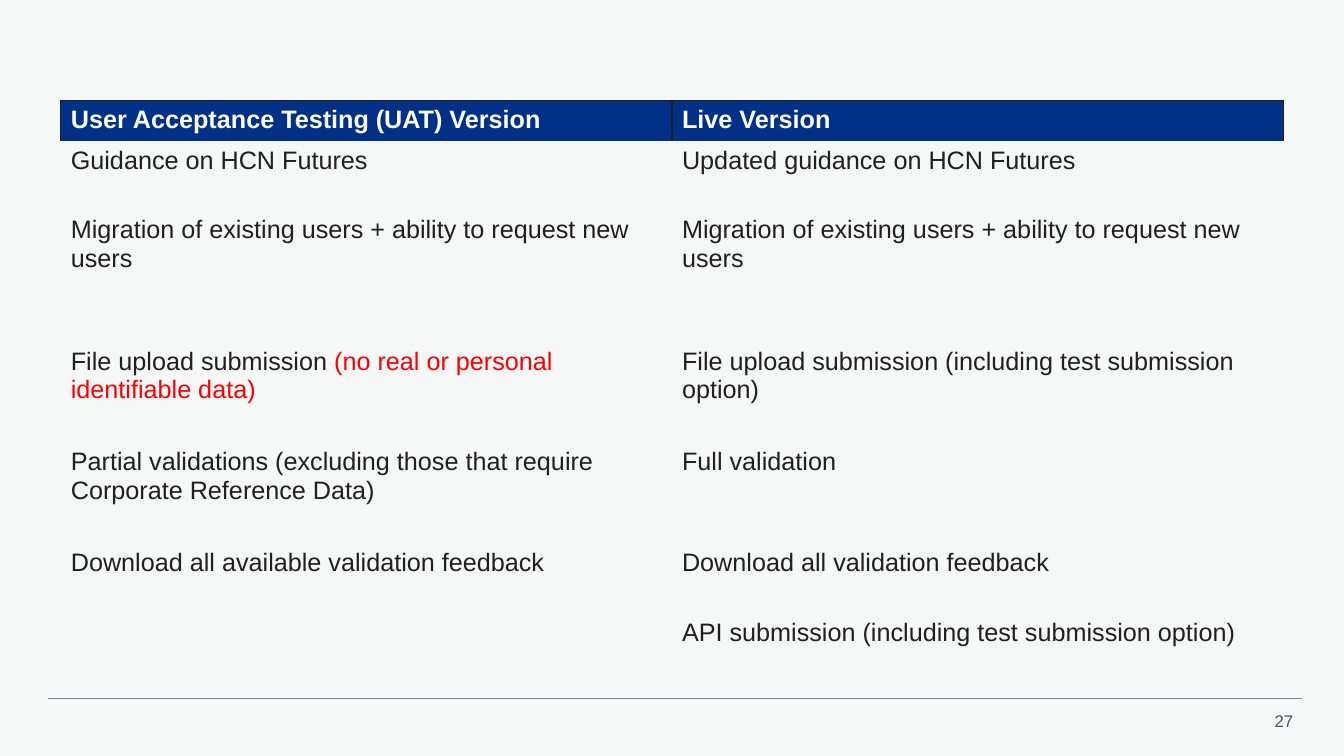
from dataclasses import dataclass

from lxml import etree
from pptx import Presentation
from pptx.dml.color import RGBColor
from pptx.enum.shapes import MSO_CONNECTOR
from pptx.enum.text import PP_ALIGN
from pptx.oxml.ns import qn
from pptx.util import Pt

STRAIGHT = MSO_CONNECTOR.STRAIGHT
RIGHT = PP_ALIGN.RIGHT
BLANK_LAYOUT = 6
PLAIN_TABLE_STYLE = "{2D5ABB26-0587-4C30-8999-92F81FD0307C}"


@dataclass(frozen=True)
class Theme:
    font: str = "Arial"
    background: str = "F6F8F8"
    header: str = "003087"
    header_text: str = "FFFFFF"
    ink: str = "231F20"
    warning: str = "FF0000"
    rule: str = "768692"
    number: str = "425563"
    table_size: float = 18
    number_size: float = 12


THEME = Theme()

HEADINGS = ("User Acceptance Testing (UAT) Version", "Live Version")
MIGRATION = "Migration of existing users + ability to request new users"
COMPARISON = [
    (50, "Guidance on HCN Futures", "Updated guidance on HCN Futures"),
    (93.6, MIGRATION, MIGRATION),
    (72.1, "File upload submission ",
     "File upload submission (including test submission option)"),
    (72.1, "Partial validations (excluding those that require Corporate Reference Data)",
     "Full validation"),
    (50, "Download all available validation feedback", "Download all validation feedback"),
    (50, "", "API submission (including test submission option)"),
]
UPLOAD_ROW = 3
UPLOAD_WARNING = "(no real or personal identifiable data)"
HEADER_HEIGHT = 29.2
COLUMN_WIDTH = 436.6


def add_span(para, text, color, size, bold=False):
    span = para.add_run()
    span.text = text
    formats = {"name": THEME.font, "size": Pt(size), "bold": bold}
    for name, value in formats.items():
        setattr(span.font, name, value)
    span.font.color.rgb = RGBColor.from_string(color)


def add_header_borders(cell):
    properties = cell._tc.get_or_add_tcPr()
    for position, side in enumerate(("lnL", "lnR", "lnT")):
        border = etree.Element(qn(f"a:{side}"), w=str(Pt(1)))
        fill = etree.SubElement(border, qn("a:solidFill"))
        etree.SubElement(fill, qn("a:srgbClr"), val=THEME.ink)
        properties.insert(position, border)


def fill_cell(cell, text, is_header):
    if is_header:
        cell.fill.solid()
        cell.fill.fore_color.rgb = RGBColor.from_string(THEME.header)
        add_header_borders(cell)
    else:
        cell.fill.background()
    if text:
        color = THEME.header_text if is_header else THEME.ink
        add_span(cell.text_frame.paragraphs[0], text, color, THEME.table_size, is_header)


def add_comparison_table(page):
    rows = [(HEADER_HEIGHT, *HEADINGS), *COMPARISON]
    total_height = sum(row[0] for row in rows)
    frame = page.shapes.add_table(
        len(rows), len(HEADINGS), Pt(43.4), Pt(71.6),
        Pt(COLUMN_WIDTH * len(HEADINGS)), Pt(total_height))
    table = frame.table
    table.horz_banding = False
    table._tbl.tblPr.find(qn("a:tableStyleId")).text = PLAIN_TABLE_STYLE
    for column in table.columns:
        column.width = Pt(COLUMN_WIDTH)
    for row_index, (height, *texts) in enumerate(rows):
        table.rows[row_index].height = Pt(height)
        for column_index, text in enumerate(texts):
            fill_cell(table.cell(row_index, column_index), text, row_index == 0)
    upload_para = table.cell(UPLOAD_ROW, 0).text_frame.paragraphs[0]
    add_span(upload_para, UPLOAD_WARNING, THEME.warning, THEME.table_size)


def add_footer_rule(page):
    rule = page.shapes.add_connector(STRAIGHT, Pt(34), Pt(499), Pt(929.8), Pt(499))
    rule.line.color.rgb = RGBColor.from_string(THEME.rule)
    rule.line.width = Pt(0.5)
    etree.SubElement(rule._element.spPr, qn("a:effectLst"))


def add_page_number(page, number):
    box = page.shapes.add_textbox(Pt(901.4), Pt(504), Pt(29.5), Pt(21.6))
    box.text_frame.word_wrap = True
    para = box.text_frame.paragraphs[0]
    para.alignment = RIGHT
    add_span(para, number, THEME.number, THEME.number_size)


def main():
    deck = Presentation()
    deck.slide_width, deck.slide_height = Pt(960), Pt(540)
    page = deck.slides.add_slide(deck.slide_layouts[BLANK_LAYOUT])
    page.background.fill.solid()
    page.background.fill.fore_color.rgb = RGBColor.from_string(THEME.background)
    add_page_number(page, "27")
    add_footer_rule(page)
    add_comparison_table(page)
    deck.save("out.pptx")


if __name__ == "__main__":
    main()
